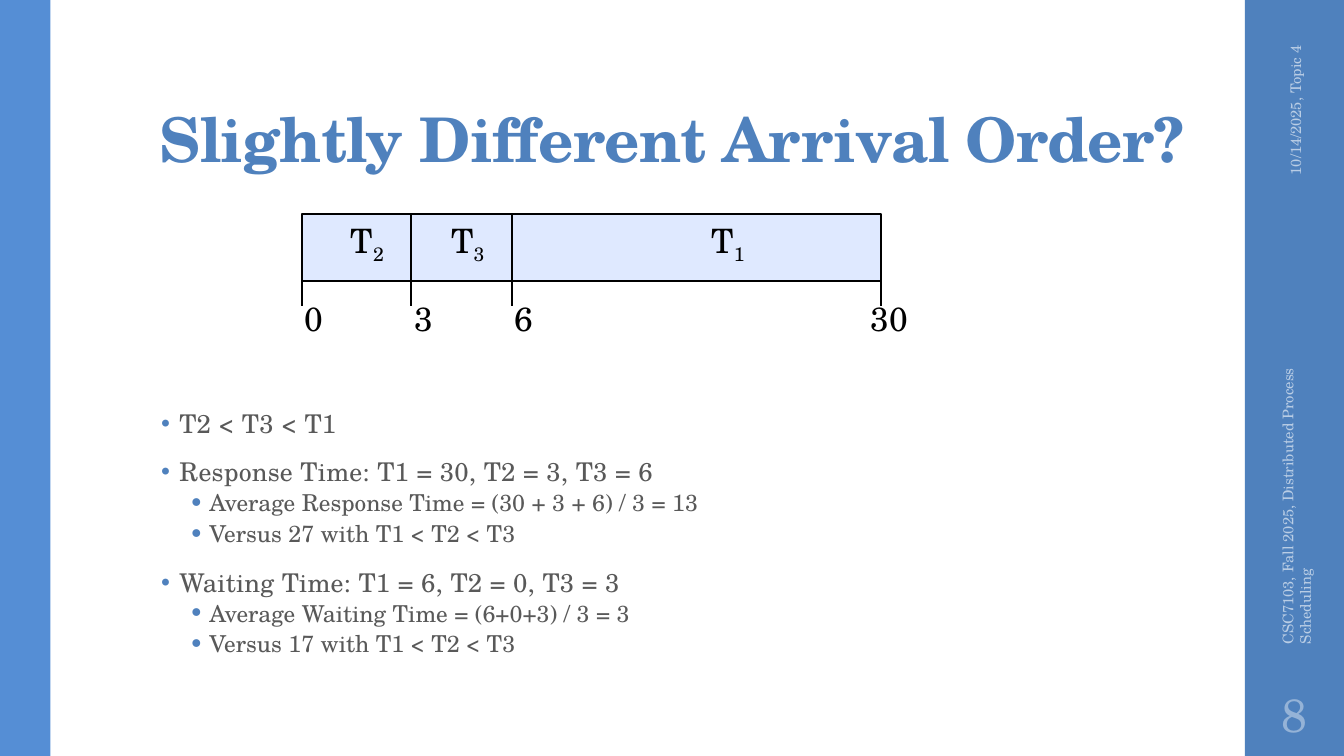
from dataclasses import dataclass

from lxml import etree
from pptx import Presentation
from pptx.dml.color import RGBColor
from pptx.enum.shapes import MSO_CONNECTOR, MSO_SHAPE
from pptx.enum.text import MSO_ANCHOR, MSO_AUTO_SIZE, PP_ALIGN
from pptx.oxml.ns import qn
from pptx.util import Pt

LEFT, CENTER, RIGHT = PP_ALIGN.LEFT, PP_ALIGN.CENTER, PP_ALIGN.RIGHT
TOP, MIDDLE, BOTTOM = MSO_ANCHOR.TOP, MSO_ANCHOR.MIDDLE, MSO_ANCHOR.BOTTOM
RECT, LINE = MSO_SHAPE.RECTANGLE, MSO_CONNECTOR.STRAIGHT
WIDTH, HEIGHT = 484.5, 272.5


@dataclass(frozen=True)
class Theme:
    face: str = "TeX Gyre Schola"
    blue: str = "4F81BD"
    band: str = "558ED5"
    gray: str = "595959"
    pale: str = "B9CDE5"
    mist: str = "95B3D7"
    ice: str = "DFE9FF"
    ink: str = "000000"
    title: float = 22.2
    page: float = 16.8
    chart: float = 12.1
    small: float = 5.3
    stroke: float = 0.75


THEME = Theme()


@dataclass(frozen=True)
class Box:
    left: float
    top: float
    width: float
    height: float

    def spans(self) -> tuple:
        return Pt(self.left), Pt(self.top), Pt(self.width), Pt(self.height)


@dataclass(frozen=True)
class Level:
    """Format of one bullet level."""
    size: float
    indent: float
    lines: float
    before: float
    after: float
    dot: int
    track: int


@dataclass(frozen=True)
class Note:
    """Small text on the side bar."""
    text: str
    box: Box
    size: float
    color: str
    align: PP_ALIGN
    turn: int = 0
    inset: float = 7.2


@dataclass(frozen=True)
class Mark:
    """Point in time on the chart, with the centre of its number."""
    x: float
    time: str
    center: float


@dataclass(frozen=True)
class Task:
    number: str
    center: float


MAIN = Level(9.3, 7.2, 0.85, 7.1, 1, 80, 10)
SUB = Level(8.4, 18, 0.8, 1.5, 1.5, 100, 0)
HANG = 7.2
BULLETS = [
    (MAIN, "T2 < T3 < T1"),
    (MAIN, "Response Time: T1 = 30, T2 = 3, T3 = 6"),
    (SUB, "Average Response Time = (30 + 3 + 6) / 3 = 13"),
    (SUB, "Versus 27 with T1 < T2 < T3"),
    (MAIN, "Waiting Time: T1 = 6, T2 = 0, T3 = 3"),
    (SUB, "Average Waiting Time = (6+0+3) / 3 = 3"),
    (SUB, "Versus 17 with T1 < T2 < T3"),
]
NOTES = [
    Note("10/14/2025, Topic 4", Box(429.1, 39.8, 75.6, 14.4),
         THEME.small, THEME.pale, RIGHT, 270),
    Note("CSC7103, Fall 2025, Distributed Process Scheduling",
         Box(397.3, 162, 140, 14.4), THEME.small, THEME.pale, LEFT, 270),
    Note("8", Box(448.8, 245.5, 36, 23.8), THEME.page, THEME.mist, CENTER, 0, 3.6),
]
MARKS = [Mark(108.9, "0", 113.1), Mark(148.3, "3", 152.7),
         Mark(184.6, "6", 189), Mark(317.7, "30", 320.7)]
TASKS = [Task("2", 132.4), Task("3", 168.7), Task("1", 262.5)]
BAR = Box(MARKS[0].x, 77.1, MARKS[-1].x - MARKS[0].x, 24.3)
FOOT = BAR.top + BAR.height
TICK = 8.8


def style(para, size: float, color: str, align=LEFT, track: int = 0) -> None:
    para.alignment = align
    font = para.font
    font.name, font.size = THEME.face, Pt(size)
    font.color.rgb = RGBColor.from_string(color)
    if track:
        font._rPr.set("spc", str(track))


def setup(frame, anchor, inset: float = 7.2, wrap: bool = True) -> None:
    frame.word_wrap = wrap
    frame.auto_size = MSO_AUTO_SIZE.NONE
    frame.vertical_anchor = anchor
    frame.margin_left = frame.margin_right = Pt(inset)
    frame.margin_top = frame.margin_bottom = Pt(3.6)


def add_block(slide, box: Box, fill: str, line: str = "") -> None:
    block = slide.shapes.add_shape(RECT, *box.spans())
    block.shadow.inherit = False
    block.fill.solid()
    block.fill.fore_color.rgb = RGBColor.from_string(fill)
    if line:
        block.line.color.rgb = RGBColor.from_string(line)
        block.line.width = Pt(THEME.stroke)
    else:
        block.line.fill.background()


def add_rule(slide, x: float, top: float, foot: float) -> None:
    rule = slide.shapes.add_connector(LINE, Pt(x), Pt(top), Pt(x), Pt(foot))
    rule.line.color.rgb = RGBColor.from_string(THEME.ink)
    rule.line.width = Pt(THEME.stroke)
    etree.SubElement(rule._element.spPr, qn("a:effectLst"))


def add_title(slide, text: str) -> None:
    title = slide.shapes.title
    title.left, title.top, title.width, title.height = Box(50.4, 11.7, 386, 55.4).spans()
    frame = title.text_frame
    setup(frame, BOTTOM)
    frame.margin_top = Pt(2.2)
    para = frame.paragraphs[0]
    para.text, para.line_spacing = text, 0.9
    style(para, THEME.title, THEME.blue, track=-27)
    para.font.bold = True


def add_note(slide, note: Note) -> None:
    shape = slide.shapes.add_textbox(*note.box.spans())
    shape.rotation = note.turn
    setup(shape.text_frame, MIDDLE, note.inset)
    para = shape.text_frame.paragraphs[0]
    para.text = note.text
    style(para, note.size, note.color, note.align)


def add_label(slide, center: float, top: float, text: str, sub: str = "") -> None:
    """Put chart text, with an optional subscript, around a centre."""
    shape = slide.shapes.add_textbox(*Box(center - 14, top, 28, 21.6).spans())
    setup(shape.text_frame, MIDDLE, wrap=False)
    para = shape.text_frame.paragraphs[0]
    para.add_run().text = text
    if sub:
        run = para.add_run()
        run.text = sub
        run.font._rPr.set("baseline", "-25000")
    style(para, THEME.chart, THEME.ink, CENTER)


def add_dot(para, level: Level) -> None:
    """Give a paragraph its bullet and hanging indent."""
    props = para._p.get_or_add_pPr()
    props.set("marL", str(Pt(level.indent)))
    props.set("indent", str(-Pt(HANG)))
    tint = etree.SubElement(props, qn("a:buClr"))
    etree.SubElement(tint, qn("a:srgbClr"), val=THEME.blue)
    etree.SubElement(props, qn("a:buSzPct"), val=str(level.dot * 1000))
    etree.SubElement(props, qn("a:buFont"), typeface=THEME.face)
    etree.SubElement(props, qn("a:buChar"), char="•")


def add_list(slide) -> None:
    frame = slide.shapes.add_textbox(*Box(50.4, 145, 341.3, 100.5).spans()).text_frame
    setup(frame, TOP)
    for index, (level, text) in enumerate(BULLETS):
        para = frame.add_paragraph() if index else frame.paragraphs[0]
        para.text = text
        para.level = int(level is SUB)
        para.line_spacing = level.lines
        para.space_before, para.space_after = Pt(level.before), Pt(level.after)
        add_dot(para, level)
        style(para, level.size, THEME.gray, track=level.track)


def add_chart(slide) -> None:
    add_block(slide, BAR, THEME.ice, THEME.ink)
    for task in TASKS:
        add_label(slide, task.center, 76.6, "T", task.number)
    for mark in MARKS[1:-1]:
        add_rule(slide, mark.x, BAR.top, FOOT)
    for mark in MARKS:
        add_rule(slide, mark.x, FOOT, FOOT + TICK)
        add_label(slide, mark.center, 104, mark.time)


def main() -> None:
    deck = Presentation()
    deck.slide_width, deck.slide_height = Pt(WIDTH), Pt(HEIGHT)
    slide = deck.slides.add_slide(deck.slide_layouts[5])
    add_block(slide, Box(448.8, 0, WIDTH - 448.8, HEIGHT), THEME.blue)
    add_block(slide, Box(0, 0, 18.2, HEIGHT), THEME.band)
    add_title(slide, "Slightly Different Arrival Order?")
    add_list(slide)
    for note in NOTES:
        add_note(slide, note)
    add_chart(slide)
    deck.save("out.pptx")


if __name__ == "__main__":
    main()
